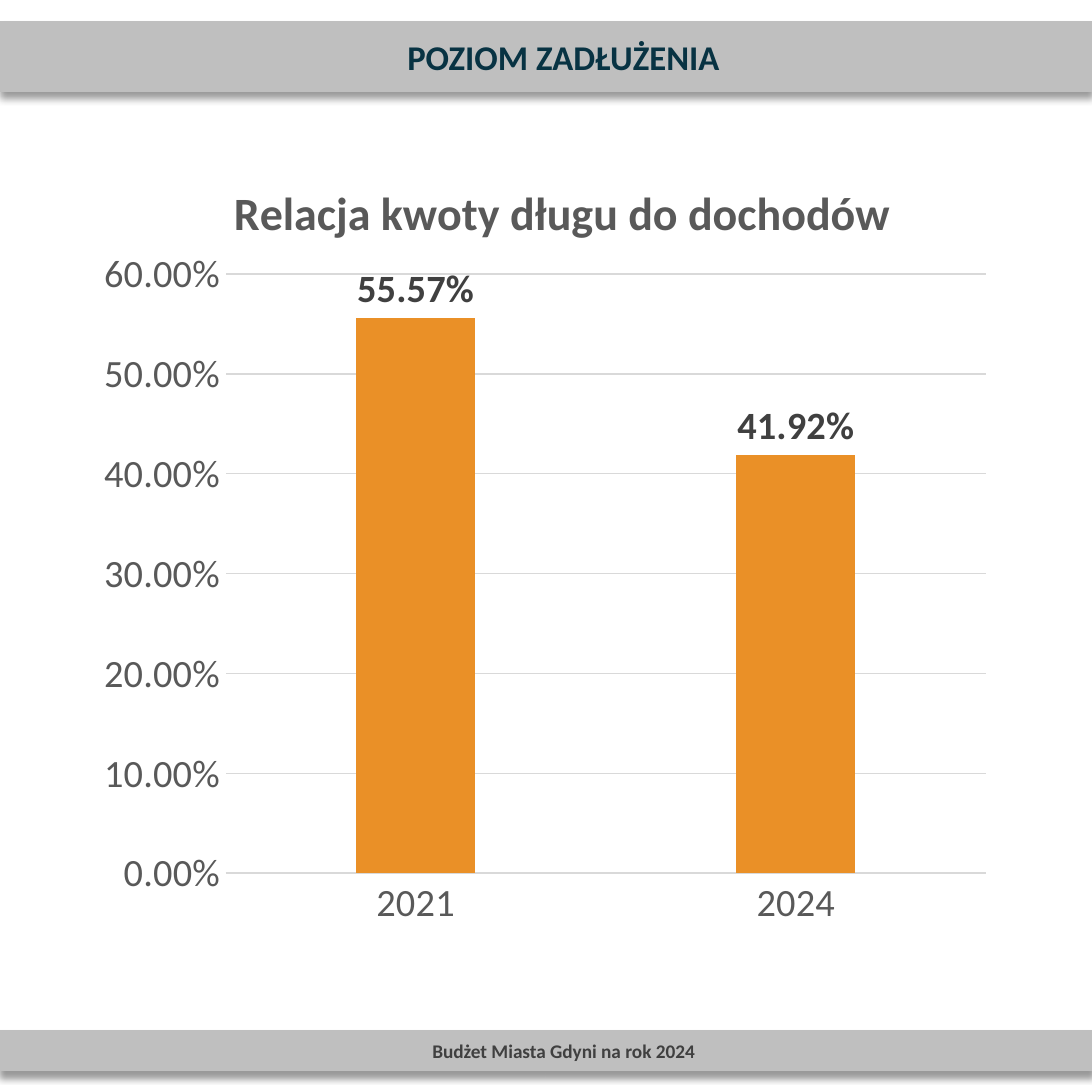
import pptx
import pptx.chart.data
import pptx.dml.color
import pptx.enum.chart
import pptx.enum.shapes
import pptx.enum.text
import pptx.oxml
import pptx.oxml.ns
import pptx.util

EMU_PER_PX = 6588
SIDE = 1092
FONT = "Calibri"
GREY = "BFBFBF"
GRID_GREY = "D9D9D9"
AXIS_GREY = "595959"
DARK_GREY = "404040"


def px(length):
    return pptx.util.Emu(length * EMU_PER_PX)


def colour(value):
    return pptx.dml.color.RGBColor.from_string(value)


def style_font(font, size, value, bold=False):
    font.name = FONT
    font.size = pptx.util.Pt(size)
    font.bold = bold
    font.color.rgb = colour(value)


def style_line(line, value, width):
    line.color.rgb = colour(value)
    line.width = pptx.util.Pt(width)


def add_shadow(shape):
    shape.shadow.inherit = False
    effects = shape.element.spPr.find(pptx.oxml.ns.qn("a:effectLst"))
    blur, distance = pptx.util.Pt(4), pptx.util.Pt(3)
    effects.append(pptx.oxml.parse_xml(
        f'<a:outerShdw {pptx.oxml.ns.nsdecls("a")} blurRad="{blur}" '
        f'dist="{distance}" dir="5400000" rotWithShape="0">'
        '<a:srgbClr val="000000"><a:alpha val="40000"/></a:srgbClr>'
        '</a:outerShdw>'))


def add_band(page, top, height, text, size, value):
    band = page.shapes.add_shape(
        pptx.enum.shapes.MSO_SHAPE.RECTANGLE, 0, px(top), px(SIDE), px(height))
    band.fill.solid()
    band.fill.fore_color.rgb = colour(GREY)
    style_line(band.line, GREY, 1)
    add_shadow(band)
    frame = band.text_frame
    frame.word_wrap = True
    frame.vertical_anchor = pptx.enum.text.MSO_ANCHOR.MIDDLE
    frame.margin_left, frame.margin_right = px(49), px(14)
    frame.margin_top = frame.margin_bottom = px(7)
    para = frame.paragraphs[0]
    para.text = text
    para.alignment = pptx.enum.text.PP_ALIGN.CENTER
    style_font(para.runs[0].font, size, value, bold=True)


def set_layout(parent, **fractions):
    """Fix a chart part at fractions of the chart's size."""
    layout = parent.find(pptx.oxml.ns.qn("c:layout"))
    if layout is None:
        layout = pptx.oxml.parse_xml(
            f'<c:layout {pptx.oxml.ns.nsdecls("c")}/>')
        parent.insert(0, layout)
    target = '<c:layoutTarget val="inner"/>' if "w" in fractions else ""
    modes = "".join(f'<c:{side}Mode val="edge"/>' for side in "xy")
    values = "".join(f'<c:{key} val="{value}"/>'
                     for key, value in fractions.items())
    layout.append(pptx.oxml.parse_xml(
        f'<c:manualLayout {pptx.oxml.ns.nsdecls("c")}>'
        f'{target}{modes}{values}</c:manualLayout>'))


def style_axis(axis):
    axis.major_tick_mark = pptx.enum.chart.XL_TICK_MARK.NONE
    axis.minor_tick_mark = pptx.enum.chart.XL_TICK_MARK.NONE
    style_font(axis.tick_labels.font, 20, AXIS_GREY)


def add_debt_chart(page):
    data = pptx.chart.data.CategoryChartData(number_format="0.00%")
    data.categories = ["2021", "2024"]
    data.add_series("Series 1", (0.5557, 0.4192))
    chart = page.shapes.add_chart(
        pptx.enum.chart.XL_CHART_TYPE.COLUMN_CLUSTERED,
        px(104), px(139), px(900), px(844), data).chart
    style_font(chart.font, 20, "000000")
    chart.has_legend = False

    # Title
    chart.has_title = True
    title = chart.chart_title
    para = title.text_frame.paragraphs[0]
    para.text = "Relacja kwoty długu do dochodów"
    style_font(para.runs[0].font, 24, AXIS_GREY, bold=True)
    set_layout(title.element, x=0.13, y=0.04)
    plot_area = title.element.getparent().find(pptx.oxml.ns.qn("c:plotArea"))
    set_layout(plot_area, x=0.13, y=0.16, w=0.85, h=0.71)

    # Axes
    style_axis(chart.category_axis)
    style_line(chart.category_axis.format.line, GRID_GREY, 0.75)
    values = chart.value_axis
    style_axis(values)
    values.minimum_scale, values.maximum_scale = 0, 0.6
    values.major_unit = 0.1
    values.format.line.fill.background()
    values.has_major_gridlines = True
    style_line(values.major_gridlines.format.line, GRID_GREY, 0.75)
    values.tick_labels.number_format = "0.00%"
    values.tick_labels.number_format_is_linked = False

    # Columns and their labels
    plot = chart.plots[0]
    plot.vary_by_categories = False
    plot.gap_width, plot.overlap = 219, -27
    columns = plot.series[0]
    columns.format.fill.solid()
    columns.format.fill.fore_color.rgb = colour("EA9027")
    labels = columns.data_labels
    labels.show_value = True
    labels.number_format = "0.00%"
    labels.number_format_is_linked = False
    labels.position = pptx.enum.chart.XL_LABEL_POSITION.OUTSIDE_END
    style_font(labels.font, 20, DARK_GREY, bold=True)


def main():
    deck = pptx.Presentation()
    deck.slide_width = deck.slide_height = px(SIDE)
    page = deck.slides.add_slide(deck.slide_layouts[6])

    # Footer and header bands
    add_band(page, 1031, 39, "Budżet Miasta Gdyni na rok 2024", 10, DARK_GREY)
    add_band(page, 22, 69, "POZIOM ZADŁUŻENIA", 18, "083343")

    # Debt to income chart
    add_debt_chart(page)
    deck.save("out.pptx")


if __name__ == "__main__":
    main()
